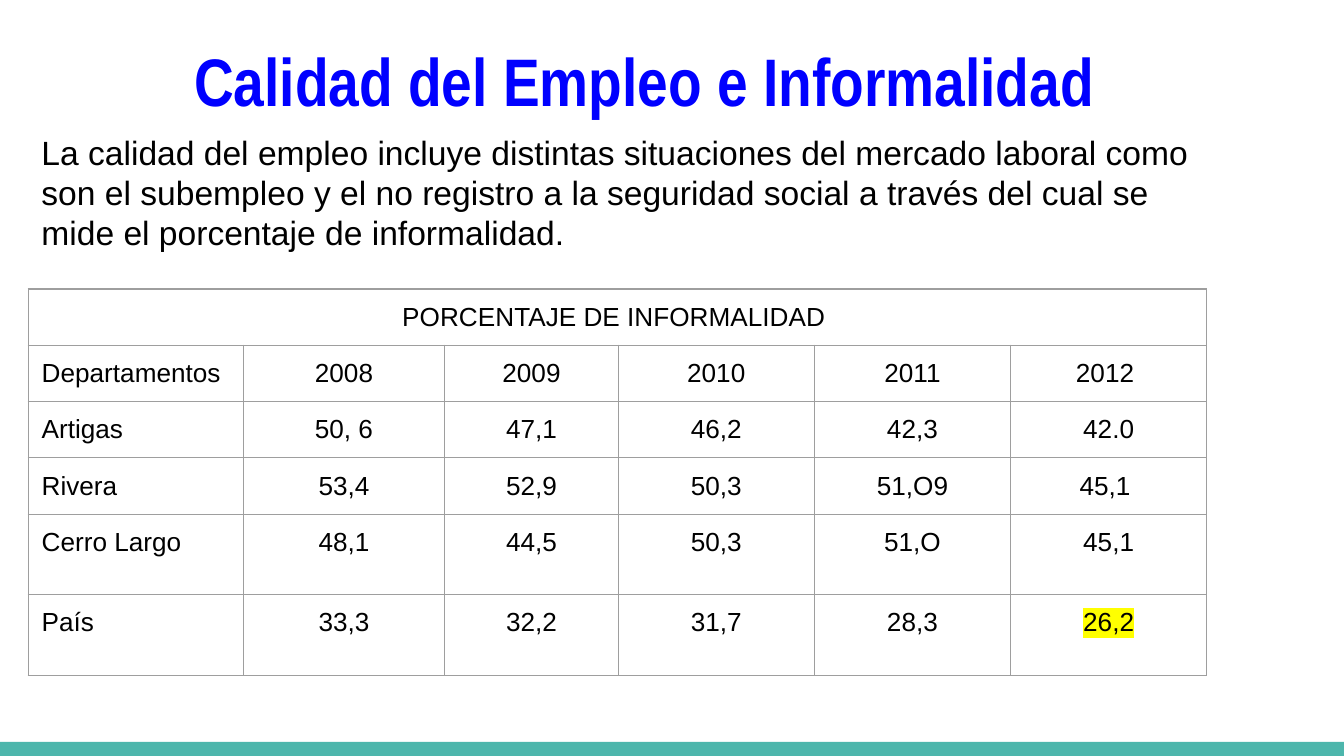
from dataclasses import dataclass

from lxml import etree
from pptx import Presentation
from pptx.dml.color import RGBColor
from pptx.enum import shapes, text
from pptx.oxml.ns import qn
from pptx.util import Inches, Pt

COLORS = {
    "band": "4DB6AC",
    "title": "0000FF",
    "text": "000000",
    "border": "9E9E9E",
    "highlight": "FFFF00",
}
MARGIN = Inches(0.1)
COLUMN_WIDTHS = [1.6, 1.5, 1.29, 1.46, 1.46, 1.46]
ROW_HEIGHTS = [0.41] * 4 + [0.6] * 2
TABLE_TITLE = "PORCENTAJE DE INFORMALIDAD "
INTRO = (
    "La calidad del empleo incluye distintas situaciones del mercado laboral "
    "como son el subempleo y el no registro a la seguridad social a través "
    "del cual se mide el porcentaje de informalidad."
)


@dataclass
class Row:
    label: str
    values: list[str]


ROWS = [
    Row("Departamentos", ["2008", "2009", "2010", "2011", "2012 "]),
    Row("Artigas", ["50, 6", "47,1", "46,2", "42,3", "42.0"]),
    Row("Rivera", ["53,4", "52,9", "50,3", "51,O9", "45,1 "]),
    Row("Cerro Largo", ["48,1", "44,5", "50,3", "51,O", "45,1"]),
    Row("País", ["33,3", "32,2", "31,7", "28,3", "26,2"]),
]


def rgb(name: str) -> RGBColor:
    return RGBColor.from_string(COLORS[name])


def style_font(font, size: float, color: str = "text", name: str = "Arial", bold: bool = False) -> None:
    font.name, font.size, font.bold = name, Pt(size), bold
    font.color.rgb = rgb(color)


def place(sp, left: float, top: float, width: float, height: float) -> None:
    sp.left, sp.top = Inches(left), Inches(top)
    sp.width, sp.height = Inches(width), Inches(height)


def set_frame(tf) -> None:
    tf.word_wrap = True
    tf.auto_size = text.MSO_AUTO_SIZE.NONE
    tf.vertical_anchor = text.MSO_ANCHOR.TOP
    tf.margin_left = tf.margin_right = tf.margin_top = tf.margin_bottom = MARGIN


def add_color(parent, tag: str, color: str) -> None:
    holder = etree.SubElement(parent, qn(tag))
    etree.SubElement(holder, qn("a:srgbClr"), val=COLORS[color])


def fill_cell(cell, content: str, align) -> None:
    cell.margin_left = cell.margin_right = cell.margin_top = cell.margin_bottom = MARGIN
    p = cell.text_frame.paragraphs[0]
    p.text, p.alignment = content, align
    style_font(p.font, 14)


def set_borders(cell) -> None:
    tc_pr = cell._tc.get_or_add_tcPr()
    for side in ("a:lnL", "a:lnR", "a:lnT", "a:lnB"):
        line = etree.SubElement(tc_pr, qn(side), w=str(Pt(0.75)))
        add_color(line, "a:solidFill", "border")
    cell.fill.background()


def highlight(run) -> None:
    style_font(run.font, 14)
    r_pr = run.font._element
    add_color(r_pr, "a:highlight", "highlight")
    r_pr.find(qn("a:solidFill")).addnext(r_pr.find(qn("a:highlight")))


def add_rate_table(slide) -> None:
    frame = slide.shapes.add_table(
        len(ROW_HEIGHTS), len(COLUMN_WIDTHS), Inches(0.21), Inches(2.15),
        Inches(sum(COLUMN_WIDTHS)), Inches(sum(ROW_HEIGHTS)),
    )
    table = frame.table
    table.first_row = table.horz_banding = False
    for column, width in zip(table.columns, COLUMN_WIDTHS):
        column.width = Inches(width)
    for table_row, height in zip(table.rows, ROW_HEIGHTS):
        table_row.height = Inches(height)

    for cell in table.iter_cells():
        set_borders(cell)
    table.cell(0, 0).merge(table.cell(0, len(COLUMN_WIDTHS) - 1))
    fill_cell(table.cell(0, 0), TABLE_TITLE, text.PP_ALIGN.CENTER)
    for i, row in enumerate(ROWS, start=1):
        fill_cell(table.cell(i, 0), row.label, text.PP_ALIGN.LEFT)
        for j, value in enumerate(row.values, start=1):
            fill_cell(table.cell(i, j), value, text.PP_ALIGN.CENTER)

    # The national rate of the last year stands out
    last = table.cell(len(ROWS), len(COLUMN_WIDTHS) - 1)
    highlight(last.text_frame.paragraphs[0].runs[0])


def main() -> None:
    prs = Presentation()
    prs.slide_width = Inches(10)
    prs.slide_height = prs.slide_width * 9 // 16
    slide = prs.slides.add_slide(prs.slide_layouts[5])

    # Bottom band
    band = slide.shapes.add_shape(
        shapes.MSO_SHAPE.RECTANGLE, Inches(0), Inches(5.52), Inches(10), Inches(0.11)
    )
    band.shadow.inherit = False
    band.fill.solid()
    band.fill.fore_color.rgb = rgb("band")
    band.line.fill.background()

    # Title
    title = slide.shapes.title
    place(title, 1.09, 0.19, 7.5, 0.94)
    set_frame(title.text_frame)
    p = title.text_frame.paragraphs[0]
    p.alignment = text.PP_ALIGN.CENTER
    r = p.add_run()
    r.text = "Calidad del Empleo e Informalidad"
    style_font(r.font, 36, "title", "Arial Narrow", bold=True)
    r = p.add_run()
    r.text = " "
    style_font(r.font, 24)

    # Introduction
    intro = slide.shapes.add_textbox(0, 0, 0, 0)
    place(intro, 0.21, 0.88, 8.89, 0.94)
    set_frame(intro.text_frame)
    p = intro.text_frame.paragraphs[0]
    p.text = INTRO
    style_font(p.font, 18)

    # Table of informality rates
    add_rate_table(slide)

    prs.save("out.pptx")


if __name__ == "__main__":
    main()
